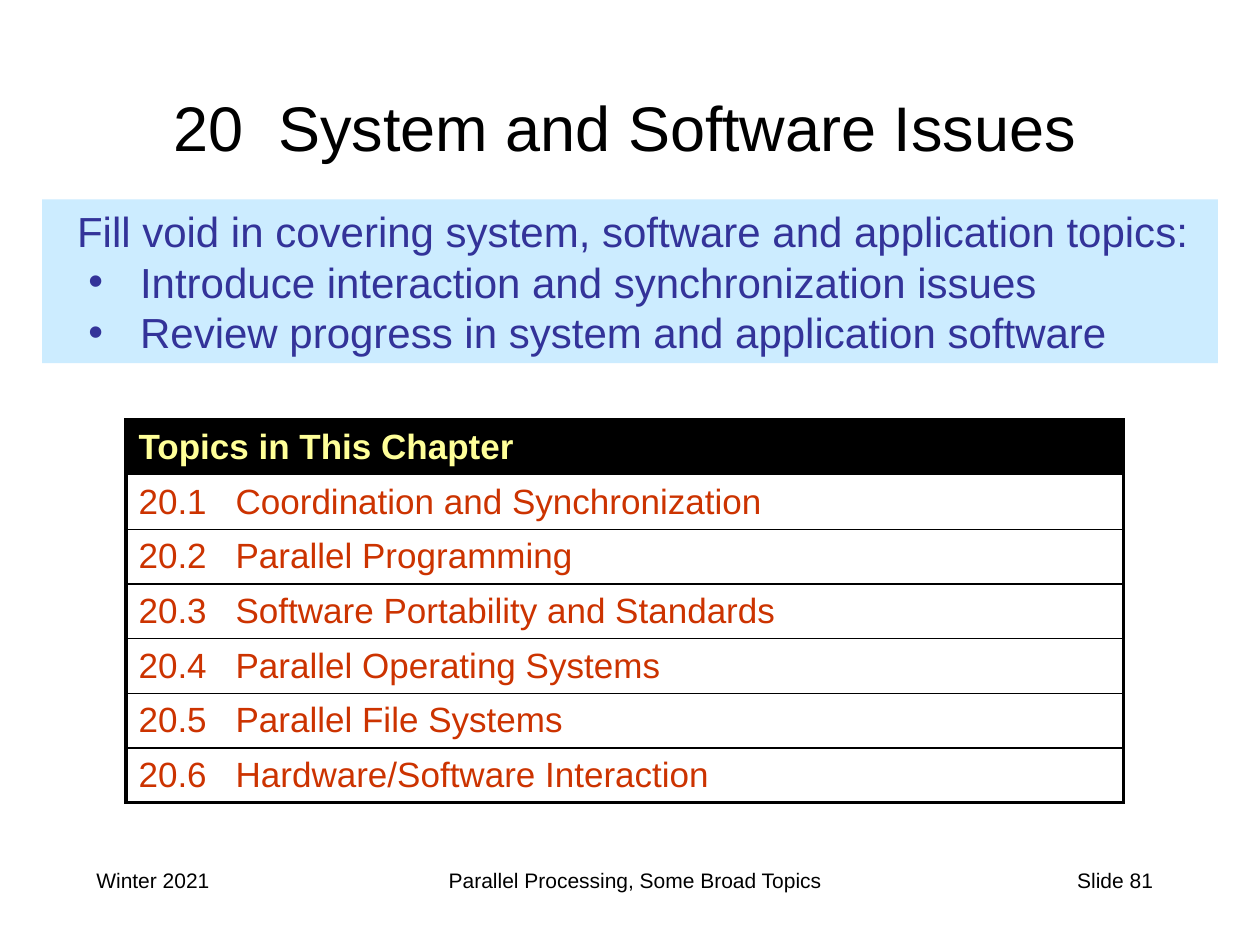
from dataclasses import dataclass

from lxml import etree
from pptx import Presentation
from pptx.dml.color import RGBColor
from pptx.enum.shapes import MSO_SHAPE
from pptx.enum.text import MSO_ANCHOR, PP_ALIGN
from pptx.oxml.ns import qn
from pptx.util import Inches, Pt

RECTANGLE = MSO_SHAPE.RECTANGLE
TOP, MIDDLE = MSO_ANCHOR.TOP, MSO_ANCHOR.MIDDLE
LEFT, CENTER = PP_ALIGN.LEFT, PP_ALIGN.CENTER
RIGHT, JUSTIFY = PP_ALIGN.RIGHT, PP_ALIGN.JUSTIFY
TITLE_ONLY = 5
GRID = Inches(1) // 12


@dataclass(frozen=True)
class Theme:
    """Colours, font, type sizes and line widths of the slide."""

    font: str = "Arial"
    ink: str = "000000"
    goal: str = "333399"
    goal_fill: str = "CCECFF"
    heading: str = "FFFF99"
    topic: str = "CC3300"
    title_size: float = 36
    goal_size: float = 24
    topic_size: float = 20
    footer_size: float = 12
    outer_line: float = 2.25
    inner_line: float = 1


THEME = Theme()


def grid_box(column, row, columns, rows):
    """Turn grid columns and rows into left, top, width and height."""
    return tuple(round(GRID * value) for value in (column, row, columns, rows))


def add_run(paragraph, text, size, color, bold=False, spacing=0):
    """Add one formatted run, with optional letter spacing in points."""
    run = paragraph.add_run()
    run.text = text
    run.font.size = Pt(size)
    run.font.name = THEME.font
    run.font.bold = bold
    run.font.color.rgb = RGBColor.from_string(color)
    if spacing:
        run.font._element.set("spc", str(round(spacing * 100)))


def set_indent(paragraph, margin, first_line=0, bullet=None):
    """Set the left margin, first-line offset and bullet of a paragraph."""
    properties = paragraph._p.get_or_add_pPr()
    properties.set("marL", str(Inches(margin)))
    properties.set("indent", str(Inches(first_line)))
    if bullet:
        etree.SubElement(properties, qn("a:buFont"), typeface=THEME.font)
        etree.SubElement(properties, qn("a:buChar"), char=bullet)


def set_borders(cell, **widths):
    """Draw solid cell borders with the given widths in points."""
    properties = cell._tc.get_or_add_tcPr()
    for side in ("L", "R", "T", "B"):
        line = etree.SubElement(properties, qn(f"a:ln{side}"), w=str(Pt(widths[side])))
        fill = etree.SubElement(line, qn("a:solidFill"))
        etree.SubElement(fill, qn("a:srgbClr"), val=THEME.ink)


def place_title(slide, box, number, name):
    """Place the chapter number and name in the title placeholder."""
    title = slide.shapes.title
    title.left, title.top, title.width, title.height = box
    frame = title.text_frame
    frame.word_wrap = True
    frame.vertical_anchor = MIDDLE
    paragraph = frame.paragraphs[0]
    paragraph.alignment = CENTER
    add_run(paragraph, number, THEME.title_size, THEME.ink)
    add_run(paragraph, " ", THEME.title_size, THEME.ink, spacing=10)
    add_run(paragraph, name, THEME.title_size, THEME.ink)


def place_goals(slide, box, lead, goals):
    """Place the tinted panel with a lead line and bulleted goals."""
    panel = slide.shapes.add_shape(RECTANGLE, *box)
    panel.shadow.inherit = False
    panel.fill.solid()
    panel.fill.fore_color.rgb = RGBColor.from_string(THEME.goal_fill)
    panel.line.fill.background()
    frame = panel.text_frame
    frame.word_wrap = True
    frame.vertical_anchor = TOP
    for index, text in enumerate([lead, *goals]):
        paragraph = frame.add_paragraph() if index else frame.paragraphs[0]
        paragraph.alignment = LEFT
        if index:
            set_indent(paragraph, 0.68, -0.41, "•")
        else:
            set_indent(paragraph, 0.18)
        add_run(paragraph, text, THEME.goal_size, THEME.goal)


def place_topics(slide, box, heading, chapter, topics):
    """Place the topic table with a heading row and numbered sections."""
    labels = [heading]
    labels += [f"{chapter}.{index}\t{topic}" for index, topic in enumerate(topics, 1)]
    table = slide.shapes.add_table(len(labels), 1, *box).table
    table.first_row = False
    table.horz_banding = False
    last = len(labels) - 1
    for index, label in enumerate(labels):
        is_heading = index == 0
        cell = table.cell(index, 0)
        set_borders(
            cell,
            L=THEME.outer_line,
            R=THEME.outer_line,
            T=THEME.outer_line if is_heading else THEME.inner_line,
            B=THEME.outer_line if index == last else THEME.inner_line,
        )
        if is_heading:
            cell.fill.solid()
            cell.fill.fore_color.rgb = RGBColor.from_string(THEME.ink)
        else:
            cell.fill.background()
        cell.vertical_anchor = MIDDLE
        paragraph = cell.text_frame.paragraphs[0]
        paragraph.alignment = JUSTIFY
        set_indent(paragraph, 0.77, -0.77)
        color = THEME.heading if is_heading else THEME.topic
        add_run(paragraph, label, THEME.topic_size, color, bold=is_heading)


def place_footer(slide, row):
    """Place the date, course and slide number on a grid row."""
    for column, columns, text, alignment in (
        (8, 25, "Winter 2021", LEFT),
        (29, 63, "Parallel Processing, Some Broad Topics", CENTER),
        (86, 25, "Slide 81", RIGHT),
    ):
        box = grid_box(column, row, columns, 6)
        frame = slide.shapes.add_textbox(*box).text_frame
        frame.word_wrap = True
        paragraph = frame.paragraphs[0]
        paragraph.alignment = alignment
        add_run(paragraph, text, THEME.footer_size, THEME.ink)


def main():
    """Build the chapter opening slide and save it."""
    presentation = Presentation()
    presentation.slide_width, presentation.slide_height = GRID * 120, GRID * 90
    slide = presentation.slides.add_slide(presentation.slide_layouts[TITLE_ONLY])
    place_footer(slide, 82)
    place_title(slide, grid_box(4, 6, 111, 12), "20", "System and Software Issues")
    place_goals(
        slide,
        grid_box(4, 19, 112, 15.6),
        "Fill void in covering system, software and application topics:",
        [
            "Introduce interaction and synchronization issues",
            "Review progress in system and application software",
        ],
    )
    place_topics(
        slide,
        grid_box(12, 40, 95, 36.4),
        "Topics in This Chapter",
        20,
        [
            "Coordination and Synchronization",
            "Parallel Programming",
            "Software Portability and Standards",
            "Parallel Operating Systems",
            "Parallel File Systems",
            "Hardware/Software Interaction",
        ],
    )
    presentation.save("out.pptx")


if __name__ == "__main__":
    main()
